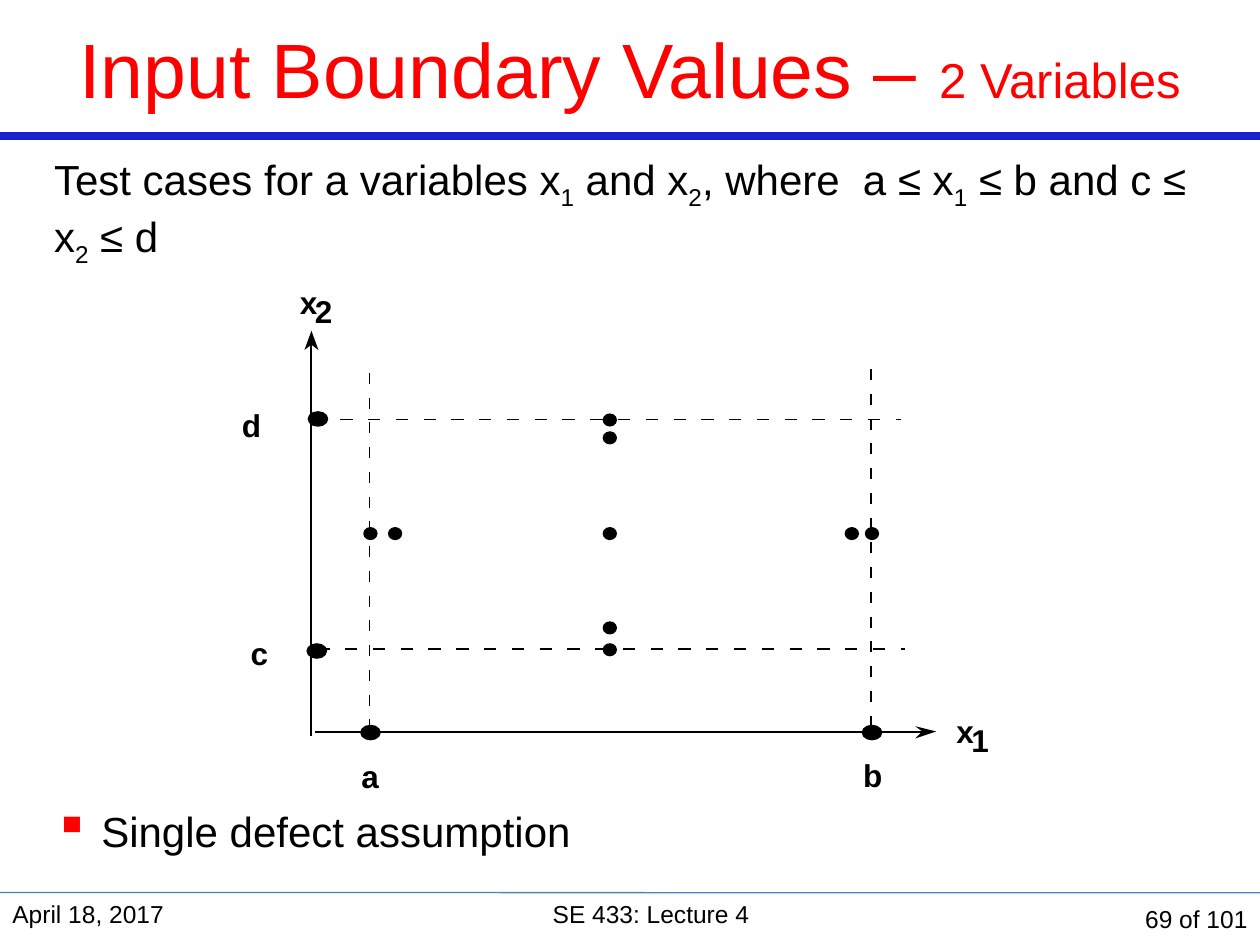
from lxml import etree
from pptx import Presentation
from pptx.dml.color import RGBColor
from pptx.enum.shapes import MSO_CONNECTOR, MSO_SHAPE
from pptx.enum.text import MSO_ANCHOR, MSO_AUTO_SIZE, PP_ALIGN
from pptx.oxml.ns import qn
from pptx.util import Pt

LEFT, CENTER, RIGHT = PP_ALIGN.LEFT, PP_ALIGN.CENTER, PP_ALIGN.RIGHT
TOP, MIDDLE = MSO_ANCHOR.TOP, MSO_ANCHOR.MIDDLE
STRAIGHT, OVAL = MSO_CONNECTOR.STRAIGHT, MSO_SHAPE.OVAL
FIT = MSO_AUTO_SIZE.SHAPE_TO_FIT_TEXT

BLACK, RED, BLUE, STEEL = "000000", "FF0000", "1822CD", "4F81BD"

TITLE = [("Input Boundary Values – ", 44), ("2 Variables", 28)]
CONDITION = ["Test cases for a variables x", "1", " and x", "2", ", where  a ≤ x", "1",
             " ≤ b and c ≤ x", "2", " ≤ d"]
ASSUMPTION = "Single defect assumption"
FOOTERS = [
    ("April 18, 2017", (0, 510, 156, 30), LEFT, TOP),
    ("SE 433: Lecture 4", (150, 510, 444, 30), CENTER, TOP),
    ("69 of 101", (600, 510, 120, 30), RIGHT, MIDDLE),
]
RULES = [((0, 77.8), (720, 77.8), BLUE, 4.5), ((0, 510), (720, 510.2), STEEL, 0.75)]
AXES = [((180, 418.3), (527, 418.3)), ((177.8, 420.5), (177.8, 197.3))]
ARROWHEADS = [
    [(535, 418.3), (522.7, 421.9), (527, 418.3), (522.7, 414.7)],
    [(177.8, 189.4), (182.2, 200.2), (177.8, 197.3), (173.5, 200.2)],
]
COLUMNS = [(211.2, 213.1, 417.6), (497.9, 211, 415)]
ROWS = [(370.8, 181.4, 517), (239.8, 178.6, 514.8)]
COLUMN_DASH, ROW_DASH = (6.3, 14.14), (7, 15.87)
LIMITS = [(211.7, 418.6), (498.3, 418.6), (181, 372), (181.7, 239.4)]
CASES = [(348.5, y) for y in (371.3, 358.8, 304.9, 250.2, 240)]
CASES += [(x, 304.9) for x in (211.7, 225.8, 486.8, 498.3)]
LABELS = [
    ("a", 206.6, 432.7), ("b", 493.2, 432), ("c", 143.3, 362.2), ("d", 138.2, 231.8),
    ("x", 171.4, 162), ("2", 180, 167), ("x", 546.5, 406.8), ("1", 555.1, 411.8),
]


def rgb(code):
    return RGBColor.from_string(code)


def apply(target, values):
    for name, value in values.items():
        setattr(target, name, value)


def add_span(para, text, size, color=BLACK, bold=False):
    span = para.add_run()
    span.text = text
    apply(span.font, {"name": "Arial", "size": Pt(size), "bold": bold})
    span.font.color.rgb = rgb(color)
    return span


def add_box(page, area, align=LEFT, **frame_format):
    box = page.shapes.add_textbox(*map(Pt, area))
    apply(box.text_frame, {"word_wrap": True, **frame_format})
    para = box.text_frame.paragraphs[0]
    para.alignment = align
    return box.text_frame, para


def add_line(page, start, end, color=BLACK, width=1):
    line = page.shapes.add_connector(STRAIGHT, *map(Pt, start + end))
    line.line.color.rgb = rgb(color)
    line.line.width = Pt(width)
    etree.SubElement(line._element.spPr, qn("a:effectLst"))


def paint(shape):
    shape.shadow.inherit = False
    shape.fill.solid()
    shape.fill.fore_color.rgb = rgb(BLACK)
    shape.line.color.rgb = rgb(BLACK)
    shape.line.width = Pt(1)


def add_dots(page, centers, width, height):
    for x, y in centers:
        area = (x - width / 2, y - height / 2, width, height)
        paint(page.shapes.add_shape(OVAL, *map(Pt, area)))


def dashes(start, end, length, pitch):
    while start < end:
        yield start, min(start + length, end)
        start += pitch


def add_bullet(para):
    properties = para._p.get_or_add_pPr()
    properties.set("marL", str(Pt(27)))
    properties.set("indent", str(-Pt(27)))
    color = etree.SubElement(properties, qn("a:buClr"))
    etree.SubElement(color, qn("a:srgbClr"), val=RED)
    etree.SubElement(properties, qn("a:buSzPct"), val="114000")
    etree.SubElement(properties, qn("a:buChar"), char="▪")


def add_texts(page):
    _, para = add_box(page, (0, 0, 720, 77.8), CENTER, vertical_anchor=MIDDLE)
    for text, size in TITLE:
        add_span(para, text, size, RED)
    frame, para = add_box(page, (23.8, 84.2, 684, 426))
    para.space_before = Pt(4.8)
    for index, text in enumerate(CONDITION):
        span = add_span(para, text, 24)
        if index % 2:
            span.font._element.set("baseline", "-25000")
    para = frame.add_paragraph()
    para.space_before = Pt(307)
    add_bullet(para)
    add_span(para, ASSUMPTION, 24)
    for text, area, align, anchor in FOOTERS:
        _, para = add_box(page, area, align, vertical_anchor=anchor)
        add_span(para, text, 14)


def add_graph(page):
    for start, end in AXES:
        add_line(page, start, end)
    for points in ARROWHEADS:
        builder = page.shapes.build_freeform(*points[0], scale=Pt(1))
        builder.add_line_segments(points[1:], close=True)
        head = builder.convert_to_shape()
        paint(head)
        head.line.fill.background()
    for x, top, bottom in COLUMNS:
        for start, end in dashes(top, bottom, *COLUMN_DASH):
            add_line(page, (x, start), (x, end))
    for y, left, right in ROWS:
        for start, end in dashes(left, right, *ROW_DASH):
            add_line(page, (start, y), (end, y))
    add_dots(page, LIMITS, 10.8, 7.9)
    add_dots(page, CASES, 7.2, 6.5)
    margins = dict.fromkeys(("margin_left", "margin_top", "margin_right", "margin_bottom"), 0)
    for text, left, top in LABELS:
        _, para = add_box(page, (left, top, 9, 17.3), word_wrap=False, auto_size=FIT, **margins)
        add_span(para, text, 18, bold=True)


def main():
    deck = Presentation()
    deck.slide_width, deck.slide_height = Pt(720), Pt(540)
    page = deck.slides.add_slide(deck.slide_layouts[6])
    for rule in RULES:
        add_line(page, *rule)
    add_texts(page)
    add_graph(page)
    deck.save("out.pptx")


if __name__ == "__main__":
    main()
